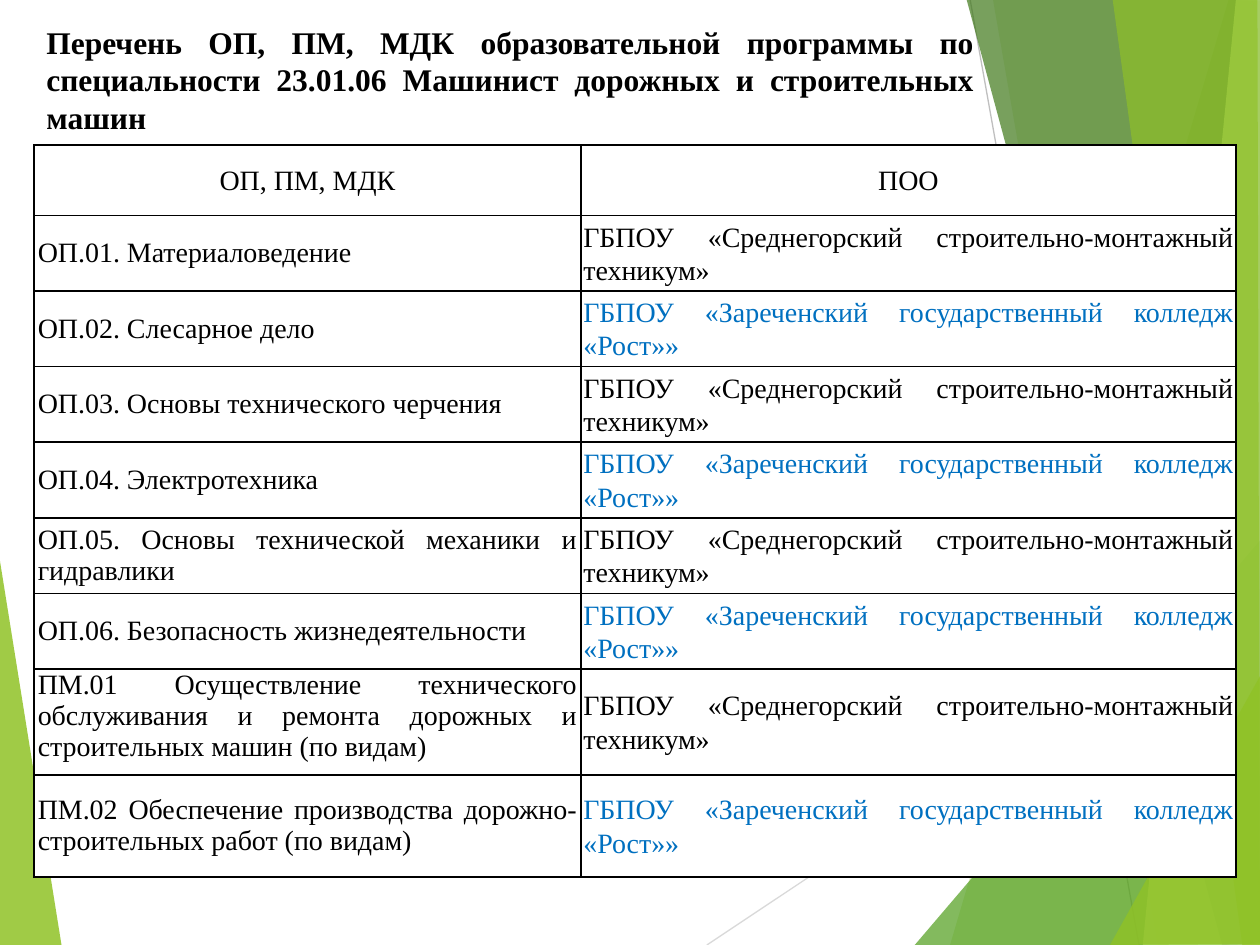
from lxml import etree
from pptx import Presentation
from pptx.dml.color import RGBColor
from pptx.enum.shapes import MSO_CONNECTOR
from pptx.enum.text import MSO_ANCHOR, PP_ALIGN
from pptx.oxml.ns import qn
from pptx.util import Inches, Pt

STRAIGHT = MSO_CONNECTOR.STRAIGHT
TOP, MIDDLE = MSO_ANCHOR.TOP, MSO_ANCHOR.MIDDLE
CENTER, JUSTIFY = PP_ALIGN.CENTER, PP_ALIGN.JUSTIFY

FONT = "Times New Roman"
COLORS = {
    "black": "000000", "white": "FFFFFF", "blue": "0070C0",
    "lime": "90C226", "green": "54A021", "forest": "3F7819", "pale": "C0E474",
    "light_gray": "D9D9D9", "gray": "BFBFBF",
}

TITLE = ("Перечень ОП, ПМ, МДК образовательной программы по специальности "
         "23.01.06 Машинист дорожных и строительных машин")
HEADERS = ["ОП, ПМ, МДК", "ПОО"]
# The two colleges take turns from row to row
COLLEGES = [
    ("ГБПОУ «Среднегорский строительно-монтажный техникум»", "black"),
    ("ГБПОУ «Зареченский государственный колледж «Рост»»", "blue"),
]
COURSES = [
    "ОП.01. Материаловедение",
    "ОП.02. Слесарное дело",
    "ОП.03. Основы технического черчения",
    "ОП.04. Электротехника",
    "ОП.05. Основы технической механики и гидравлики",
    "ОП.06. Безопасность жизнедеятельности",
    "ПМ.01 Осуществление технического обслуживания и ремонта дорожных "
    "и строительных машин (по видам)",
    "ПМ.02 Обеспечение производства дорожно-строительных работ (по видам)",
]
TOP_ANCHORED_ROW = 7
COLUMN_WIDTHS = [4.34, 5.2]
ROW_HEIGHTS = [0.56] + [0.6] * 6 + [0.84, 0.81]

# Color, opacity in percent, corners in inches
LEFT_FACET = ("lime", 85, [(-0.01, 4.39), (0.49, 7.51), (-0.01, 7.5)])
RIGHT_FACETS = [
    ("lime", 30, [(9.75, 0), (7.54, 7.5), (10.02, 7.51), (10.01, 0.01)]),
    ("lime", 20, [(7.88, -0.01), (9.19, 7.5), (10.01, 7.5), (10.01, -0.01)]),
    ("green", 72, [(7.26, 7.5), (10, 4.29), (10.01, 7.5)]),
    ("forest", 70, [(7.67, -0.01), (9.7, 7.5), (10.01, 7.49), (10.01, -0.01)]),
    ("pale", 70, [(9.81, -0.01), (9.07, 7.5), (10.01, 7.5), (10, -0.01)]),
    ("lime", 65, [(8.83, -0.01), (9.86, 7.5), (10, 7.5), (9.98, -0.01)]),
    ("lime", 80, [(8.81, 7.5), (10.01, 5.35), (10.01, 7.49)]),
]
RAYS = [
    ("light_gray", (5.61, 7.5), (10.01, 4.57)),
    ("gray", (7.7, 0), (9.04, 7.5)),
]


def rgb(name):
    return RGBColor.from_string(COLORS[name])


def add_facet(page, left, top, color, opacity, corners):
    points = [(Inches(left + x), Inches(top + y)) for x, y in corners]
    builder = page.shapes.build_freeform(*points[0], scale=1.0)
    builder.add_line_segments(points[1:], close=True)
    shape = builder.convert_to_shape()
    shape.shadow.inherit = False
    shape.line.fill.background()
    shape.fill.solid()
    shape.fill.fore_color.rgb = rgb(color)
    tint = shape.fill._xPr.find(qn("a:solidFill"))[0]
    etree.SubElement(tint, qn("a:alpha"), val=str(opacity * 1000))


def add_ray(page, left, top, color, start, end):
    ray = page.shapes.add_connector(
        STRAIGHT, Inches(left + start[0]), Inches(top + start[1]),
        Inches(left + end[0]), Inches(top + end[1]))
    ray.line.color.rgb = rgb(color)
    ray.line.width = Pt(0.75)
    etree.SubElement(ray._element.spPr, qn("a:effectLst"))


def add_backdrop(page, left, top):
    add_facet(page, left, top, *LEFT_FACET)
    for ray in RAYS:
        add_ray(page, left, top, *ray)
    for facet in RIGHT_FACETS:
        add_facet(page, left, top, *facet)


def write_text(frame, text, size, color="black", align=JUSTIFY, bold=False,
               spacing=None):
    para = frame.paragraphs[0]
    para.alignment = align
    para.line_spacing = spacing
    span = para.add_run()
    span.text = text
    span.font.name = FONT
    span.font.size = Pt(size)
    span.font.bold = bold
    span.font.color.rgb = rgb(color)


def add_title(page, left, top, width, height):
    box = page.shapes.add_textbox(
        Inches(left), Inches(top), Inches(width), Inches(height))
    box.text_frame.word_wrap = True
    write_text(box.text_frame, TITLE, 18, bold=True)


def set_borders(cell):
    properties = cell._tc.get_or_add_tcPr()
    for index, side in enumerate(("lnL", "lnR", "lnT", "lnB")):
        line = etree.Element(qn(f"a:{side}"), w=str(Pt(1)))
        fill = etree.SubElement(line, qn("a:solidFill"))
        etree.SubElement(fill, qn("a:srgbClr"), val=COLORS["black"])
        properties.insert(index, line)


def fill_cell(cell, text, inset, anchor=MIDDLE, **style):
    cell.margin_left = cell.margin_right = Inches(inset)
    cell.margin_top = cell.margin_bottom = 0
    cell.vertical_anchor = anchor
    cell.fill.solid()
    cell.fill.fore_color.rgb = rgb("white")
    set_borders(cell)
    write_text(cell.text_frame, text, 16, **style)


def add_course_table(page, left, top, width, height):
    table = page.shapes.add_table(
        len(ROW_HEIGHTS), len(COLUMN_WIDTHS), Inches(left), Inches(top),
        Inches(width), Inches(height)).table
    for column, column_width in zip(table.columns, COLUMN_WIDTHS):
        column.width = Inches(column_width)
    for row, row_height in zip(table.rows, ROW_HEIGHTS):
        row.height = Inches(row_height)
    for index, header in enumerate(HEADERS):
        fill_cell(table.cell(0, index), header, 0.03, align=CENTER, spacing=1.07)
    for index, course in enumerate(COURSES, start=1):
        anchor = TOP if index == TOP_ANCHORED_ROW else MIDDLE
        college, color = COLLEGES[(index - 1) % len(COLLEGES)]
        fill_cell(table.cell(index, 0), course, 0.03, anchor)
        fill_cell(table.cell(index, 1), college, 0.02, color=color, spacing=1.07)


def main():
    deck = Presentation()
    deck.slide_width, deck.slide_height = Inches(10), Inches(7.5)
    page = deck.slides.add_slide(deck.slide_layouts[6])
    add_backdrop(page, 0, 0)
    add_course_table(page, 0.27, 1.15, sum(COLUMN_WIDTHS), sum(ROW_HEIGHTS))
    add_title(page, 0.27, 0.13, 7.56, 1.44)
    deck.save("out.pptx")


if __name__ == "__main__":
    main()
